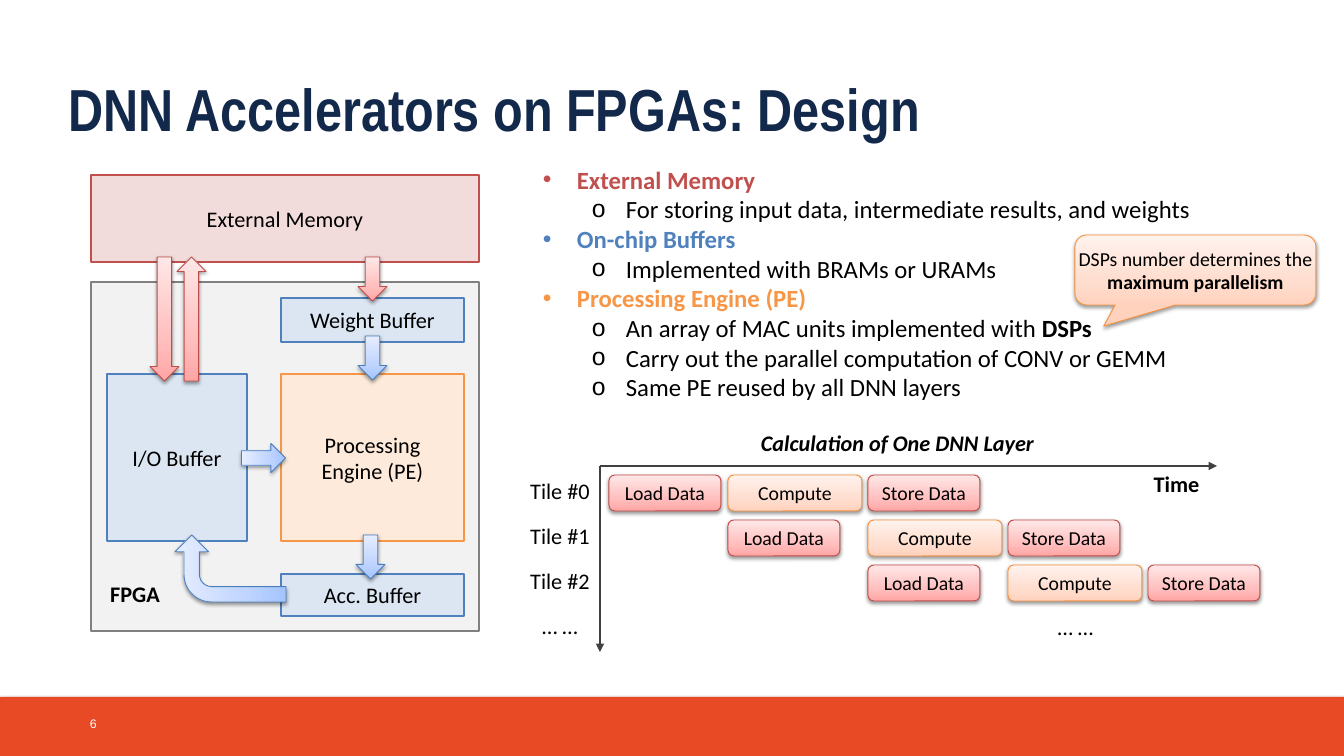
"""Build the slide on the design of DNN accelerators on FPGAs."""
from copy import deepcopy
from lxml import etree
from pptx import Presentation
from pptx.dml.color import RGBColor
from pptx.enum.shapes import MSO_CONNECTOR, MSO_SHAPE
from pptx.enum.text import MSO_ANCHOR, MSO_AUTO_SIZE, PP_ALIGN
from pptx.oxml.ns import qn
from pptx.util import Pt

PX = 10280
RECT, ROUND = MSO_SHAPE.RECTANGLE, MSO_SHAPE.ROUNDED_RECTANGLE
DOWN, UP, BENT = MSO_SHAPE.DOWN_ARROW, MSO_SHAPE.UP_ARROW, MSO_SHAPE.BENT_ARROW
CALL = MSO_SHAPE.ROUNDED_RECTANGULAR_CALLOUT
LINE = MSO_CONNECTOR.STRAIGHT
TOP, MIDDLE = MSO_ANCHOR.TOP, MSO_ANCHOR.MIDDLE
NONE = MSO_AUTO_SIZE.NONE
LEFT, CENTER = PP_ALIGN.LEFT, PP_ALIGN.CENTER

BLACK = RGBColor(0, 0, 0)
WHITE = RGBColor(255, 255, 255)
NAVY = RGBColor(0x13, 0x29, 0x4B)
BRICK = RGBColor(0xC0, 0x50, 0x4D)
BLUE = RGBColor(0x4F, 0x81, 0xBD)
AMBER = RGBColor(0xF7, 0x96, 0x46)
DARK = RGBColor(0x40, 0x40, 0x40)
GRAY = RGBColor(0x80, 0x80, 0x80)
FLAME = RGBColor(0xE8, 0x4A, 0x26)

BAND = (FLAME, 0, [FLAME])
MEMORY = (BRICK, 1.5, [RGBColor(0xF2, 0xDC, 0xDB)])
CHIP = (GRAY, 1.5, [RGBColor(0xF2, 0xF2, 0xF2)])
ENGINE = (AMBER, 1.5, [RGBColor(0xFD, 0xEA, 0xDA)])
BUFFER = (BLUE, 1.5, [RGBColor(0xDC, 0xE6, 0xF2)])
COOL = (RGBColor(0x4B, 0x7E, 0xBC), 0.75, [
    RGBColor(0xA4, 0xC4, 0xFF), RGBColor(0xBF, 0xD4, 0xFF), RGBColor(0xE6, 0xEE, 0xFF)])
ROSE = (RGBColor(0xBF, 0x4C, 0x48), 0.75, [
    RGBColor(0xFF, 0xA6, 0xA5), RGBColor(0xFF, 0xC0, 0xBF), RGBColor(0xFF, 0xE7, 0xE7)])
PEACH = (RGBColor(0xF6, 0x92, 0x40), 0.75, [
    RGBColor(0xFF, 0xD2, 0xBD), RGBColor(0xFF, 0xDE, 0xD0), RGBColor(0xFF, 0xF2, 0xED)])


def style(paras, size, color=BLACK, bold=False, italic=False, align=CENTER, face="Calibri"):
    for para in paras:
        para.alignment = align
        for run in para.runs:
            font = run.font
            font.name, font.size = face, Pt(size)
            font.bold, font.italic = bold, italic
            font.color.rgb = color


def draw(kind, at, paint, text="", size=18, turn=0):
    edge, width, shades = paint
    shape = slide.shapes.add_shape(kind, *[n * PX for n in at])
    shape.rotation = turn
    shape.shadow.inherit = False
    if len(shades) == 1:
        shape.fill.solid()
        shape.fill.fore_color.rgb = shades[0]
    else:
        shape.fill.gradient()
        shape.fill.gradient_angle = 90
        stops = shape._element.spPr.find(".//" + qn("a:gsLst"))
        stops.insert(1, deepcopy(stops[0]))
        for stop, place, shade in zip(shape.fill.gradient_stops, (0, 0.35, 1), shades):
            stop.position = place
            stop.color.rgb = shade
    if width:
        shape.line.color.rgb = edge
        shape.line.width = Pt(width)
    else:
        shape.line.fill.background()
    if width < 1:
        effects = shape._element.spPr.find(qn("a:effectLst"))
        shade = etree.SubElement(effects, qn("a:outerShdw"), blurRad="40000", dist="20000",
                                 dir="5400000", rotWithShape="0")
        tone = etree.SubElement(shade, qn("a:srgbClr"), val="000000")
        etree.SubElement(tone, qn("a:alpha"), val="38000")
    if text:
        shape.text_frame.text = text
        style(shape.text_frame.paragraphs, size)
    return shape


deck = Presentation()
deck.slide_width, deck.slide_height = 1344 * PX, 756 * PX
slide = deck.slides.add_slide(deck.slide_layouts[1])
title, body = slide.placeholders

draw(RECT, (0, 697, 1344, 59), BAND)

title.left, title.top, title.width, title.height = 60 * PX, 61 * PX, 1228 * PX, 70 * PX
frame = title.text_frame
frame.text = "DNN Accelerators on FPGAs: Design"
frame.vertical_anchor, frame.auto_size = TOP, NONE
frame.margin_top = 11 * PX
style(frame.paragraphs, 48, NAVY, True, align=LEFT, face="Arial Narrow")

for text, at, paint in (
    ("External Memory", (91, 175, 388, 87), MEMORY),
    ("", (91, 282, 388, 349), CHIP),
    ("Processing\nEngine (PE)", (281, 374, 183, 167), ENGINE),
    ("Weight Buffer", (281, 298, 183, 44), BUFFER),
    ("Acc. Buffer", (281, 574, 183, 42), BUFFER),
    ("I/O Buffer", (107, 374, 140, 167), BUFFER),
):
    draw(RECT, at, paint, text)

for kind, at, paint, turn in (
    (DOWN, (358, 336, 29, 44), COOL, 0),
    (DOWN, (356, 535, 29, 44), COOL, 0),
    (DOWN, (249, 436, 29, 44), COOL, 270),
    (DOWN, (358, 257, 29, 44), ROSE, 0),
    (DOWN, (150, 257, 29, 124), ROSE, 0),
    (UP, (177, 257, 29, 124), ROSE, 0),
):
    draw(kind, at, paint, turn=turn)

bend = draw(BENT, (197, 513, 67, 111), COOL, turn=270)
for n, ratio in enumerate((0.23, 0.25, 0.25, 0.41)):
    bend.adjustments[n] = ratio

for right, low in ((1217, 466), (600, 652)):
    axis = slide.shapes.add_connector(LINE, 600 * PX, 466 * PX, right * PX, low * PX)
    axis.line.color.rgb = DARK
    axis.line.width = Pt(2.25)
    props = axis._element.spPr
    etree.SubElement(props.find(qn("a:ln")), qn("a:tailEnd"), type="triangle")
    etree.SubElement(props, qn("a:effectLst"))

starts = [609] + [728 + 140 * n for n in range(4)]
tasks = (("Load Data", 112, ROSE), ("Compute", 134, PEACH), ("Store Data", 112, ROSE))
for row in range(3):
    for step, (text, width, paint) in enumerate(tasks):
        draw(ROUND, (starts[row + step], 475 + 45 * row, width, 36), paint, text, 16)

labels = [(text, (520, 473 + 45 * row, 80, 36), False, False)
          for row, text in enumerate(("Tile #0", "Tile #1", "Tile #2", "… …"))]
labels += [
    ("… …", (1036, 609, 79, 36), False, False),
    ("FPGA", (101, 576, 68, 36), True, False),
    ("Time", (1136, 466, 81, 36), True, False),
    ("Calculation of One DNN Layer", (751, 425, 293, 36), True, True),
]
for text, at, bold, italic in labels:
    frame = slide.shapes.add_textbox(*[n * PX for n in at]).text_frame
    frame.word_wrap = text != "FPGA"
    frame.text = text
    style(frame.paragraphs, 18, bold=bold, italic=italic)

body.left, body.top, body.width, body.height = 534 * PX, 160 * PX, 728 * PX, 248 * PX
frame = body.text_frame
frame.auto_size = NONE
points = (
    (0, "External Memory", BRICK),
    (1, "For storing input data, intermediate results, and weights", BLACK),
    (0, "On-chip Buffers", BLUE),
    (1, "Implemented with BRAMs or URAMs", BLACK),
    (0, "Processing Engine (PE)", AMBER),
    (1, "An array of MAC units implemented with ", BLACK),
    (1, "Carry out the parallel computation of CONV or GEMM", BLACK),
    (1, "Same PE reused by all DNN layers", BLACK),
)
frame.text = "\n".join(text for _, text, _ in points)
frame.paragraphs[5].add_run().text = "DSPs"
for para, (level, _, color) in zip(frame.paragraphs, points):
    para.level = level
    para.space_before = Pt(0)
    props = para._p.get_or_add_pPr()
    props.set("marL", str((34, 83)[level] * PX))
    props.set("indent", str(-34 * PX))
    etree.SubElement(props, qn("a:buFont"), typeface="Arial")
    etree.SubElement(props, qn("a:buChar"), char="•o"[level])
    style([para], 20, color, level == 0, align=LEFT)
frame.paragraphs[5].runs[1].font.bold = True

note = draw(CALL, (1075, 235, 241, 70), PEACH, "DSPs number determines the ")
for n, ratio in enumerate((-0.38, 0.8, 0.17)):
    note.adjustments[n] = ratio
frame = note.text_frame
frame.margin_left = frame.margin_right = 0
para = frame.paragraphs[0]
para.add_run().text = "maximum parallelism"
style([para], 16)
para.runs[1].font.bold = True

frame = slide.shapes.add_textbox(81 * PX, 704 * PX, 52 * PX, 40 * PX).text_frame
frame.word_wrap = True
frame.vertical_anchor = MIDDLE
frame.text = "6"
style(frame.paragraphs, 10, WHITE, align=LEFT, face="Arial")

deck.save("out.pptx")
